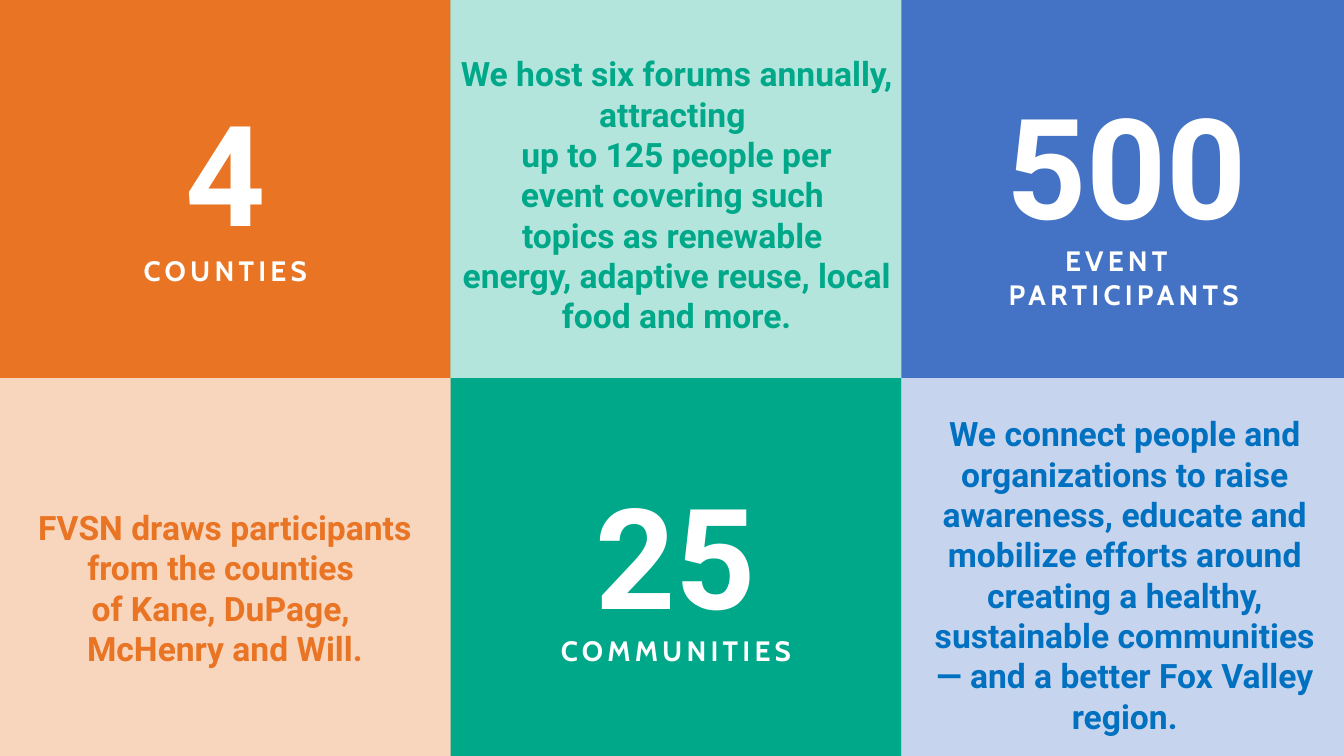
from lxml import etree
from pptx import Presentation
from pptx.dml.color import RGBColor
from pptx.enum.shapes import MSO_SHAPE
from pptx.enum.text import MSO_AUTO_SIZE, PP_ALIGN
from pptx.oxml.ns import qn
from pptx.util import Inches, Pt

RECTANGLE = MSO_SHAPE.RECTANGLE
CENTER = PP_ALIGN.CENTER
FIT_SHAPE = MSO_AUTO_SIZE.SHAPE_TO_FIT_TEXT

ORANGE = RGBColor(0xE8, 0x74, 0x24)
GREEN = RGBColor(0x00, 0xA8, 0x8A)
BLUE = RGBColor(0x44, 0x72, 0xC4)
DEEP_BLUE = RGBColor(0x00, 0x70, 0xC0)
WHITE = RGBColor(0xFF, 0xFF, 0xFF)

HEIGHT = 7.5
COLUMN = 4.47
ROW = HEIGHT / 2

deck = Presentation()
deck.slide_width, deck.slide_height = Inches(13.33), Inches(HEIGHT)
page = deck.slides.add_slide(deck.slide_layouts[6])


def add_tile(column, top, height, color, opacity=100):
    tile = page.shapes.add_shape(RECTANGLE, Inches(column * COLUMN), Inches(top),
                                 Inches(COLUMN), Inches(height))
    tile.shadow.inherit = False
    tile.line.fill.background()
    tile.fill.solid()
    tile.fill.fore_color.rgb = color
    if opacity < 100:
        color_node = tile.fill._xPr.find(qn("a:solidFill"))[0]
        etree.SubElement(color_node, qn("a:alpha"), val=str(opacity * 1000))


def add_text(text, left, top, width, height, *, size, color=WHITE, font="Roboto", spacing=0):
    box = page.shapes.add_textbox(Inches(left), Inches(top), Inches(width), Inches(height))
    frame = box.text_frame
    frame.word_wrap = True
    frame.auto_size = FIT_SHAPE
    frame.text = text  # \n starts a paragraph, \v breaks a line
    for para in frame.paragraphs:
        para.alignment = CENTER
        for span in para.runs:
            span.font.name = font
            span.font.size = Pt(size)
            span.font.bold = True
            span.font.color.rgb = color
            if spacing:
                span.font._element.set("spc", str(spacing * 100))


# Colour columns, each with one half lightened
for column, (color, light_top) in enumerate([(ORANGE, ROW), (GREEN, 0), (BLUE, ROW)]):
    add_tile(column, 0, HEIGHT, color)
    add_tile(column, light_top, ROW, WHITE, opacity=70)

# Big figures and their labels
figures = [
    ("4", 0, 0.81, "COUNTIES", 0, 2.47, 0.44),
    ("25", COLUMN, 4.61, "COMMUNITIES", COLUMN, 6.24, 0.44),
    ("500", 2 * COLUMN, 0.74, "EVENT \vPARTICIPANTS", 8.91, 2.37, 0.77),
]
for number, left, top, label, label_left, label_top, label_height in figures:
    add_text(number, left, top, COLUMN, 1.78, size=100)
    add_text(label, label_left, label_top, COLUMN, label_height,
             size=20, font="Cabin", spacing=3)

# Descriptions on the light halves
descriptions = [
    ("FVSN draws participants\nfrom the counties \vof Kane, DuPage, \vMcHenry and Will.",
     -0.03, 4.98, 4.52, 1.72, ORANGE),
    ("We host six forums annually, attracting \vup to 125 people per\n"
     "event covering such \vtopics as renewable \venergy, adaptive reuse, local food and more.",
     4.47, 0.48, 4.48, 2.93, GREEN),
    ("We connect people and organizations to raise awareness, educate and mobilize efforts "
     "around creating a healthy, sustainable communities\v— and a better Fox Valley region.",
     8.95, 4.05, 4.41, 3.33, DEEP_BLUE),
]
for text, left, top, width, height, color in descriptions:
    add_text(text, left, top, width, height, size=24, color=color)

deck.save("out.pptx")
